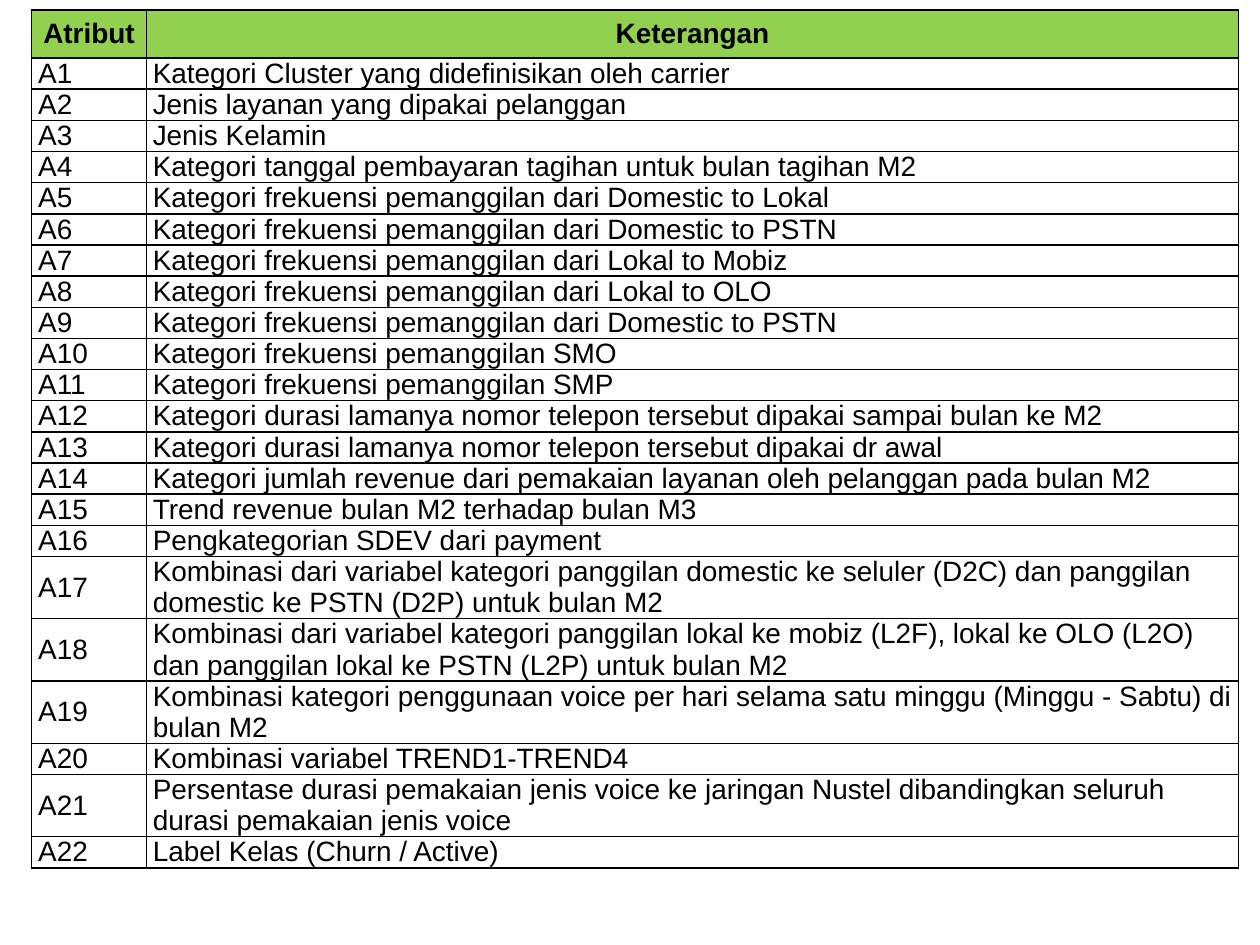
import pptx
import pptx.dml.color
import pptx.enum.text
import pptx.oxml
import pptx.oxml.ns
import pptx.util

Cm = pptx.util.Cm
Pt = pptx.util.Pt
RGBColor = pptx.dml.color.RGBColor
PP_ALIGN = pptx.enum.text.PP_ALIGN

BLACK = RGBColor(0x00, 0x00, 0x00)
GREEN = RGBColor(0x92, 0xD0, 0x50)

HEADER = ("Atribut", "Keterangan")
DESCRIPTIONS = [
    "Kategori Cluster yang didefinisikan oleh carrier",
    "Jenis layanan yang dipakai pelanggan",
    "Jenis Kelamin",
    "Kategori tanggal pembayaran tagihan untuk bulan tagihan M2",
    "Kategori frekuensi pemanggilan dari Domestic to Lokal",
    "Kategori frekuensi pemanggilan dari Domestic to PSTN",
    "Kategori frekuensi pemanggilan dari Lokal to Mobiz",
    "Kategori frekuensi pemanggilan dari Lokal to OLO",
    "Kategori frekuensi pemanggilan dari Domestic to PSTN",
    "Kategori frekuensi pemanggilan SMO",
    "Kategori frekuensi pemanggilan SMP",
    "Kategori durasi lamanya nomor telepon tersebut dipakai sampai bulan ke M2",
    "Kategori durasi lamanya nomor telepon tersebut dipakai dr awal",
    "Kategori jumlah revenue dari pemakaian layanan oleh pelanggan pada bulan M2",
    "Trend revenue bulan M2 terhadap bulan M3",
    "Pengkategorian SDEV dari payment",
    "Kombinasi dari variabel kategori panggilan domestic ke seluler (D2C) "
    "dan panggilan domestic ke PSTN (D2P) untuk bulan M2",
    "Kombinasi dari variabel kategori panggilan lokal ke mobiz (L2F), "
    "lokal ke OLO (L2O) dan panggilan lokal ke PSTN (L2P) untuk bulan M2",
    "Kombinasi kategori penggunaan voice per hari selama satu minggu "
    "(Minggu - Sabtu) di bulan M2",
    "Kombinasi variabel TREND1-TREND4",
    "Persentase durasi pemakaian jenis voice ke jaringan Nustel "
    "dibandingkan seluruh durasi pemakaian jenis voice",
    "Label Kelas (Churn / Active)",
]

COLUMN_WIDTHS = (2.31, 22.02)
HEADER_HEIGHT = 0.97
LINE_HEIGHT = 0.58
CHARS_PER_LINE = 85


def write_text(tf, text, font="Arial", size=16, color=BLACK, bold=False,
               align=PP_ALIGN.LEFT):
    p = tf.paragraphs[0]
    p.alignment = align
    r = p.add_run()
    r.text = text
    r.font.name = font
    r.font.size = Pt(size)
    r.font.bold = bold
    r.font.color.rgb = color


def add_borders(cell, color=BLACK, width=1):
    """Draw all four edges; they must precede the fill in the cell XML."""
    tc_pr = cell._tc.get_or_add_tcPr()
    for i, edge in enumerate(("lnL", "lnR", "lnT", "lnB")):
        tc_pr.insert(i, pptx.oxml.parse_xml(
            f'<a:{edge} {pptx.oxml.ns.nsdecls("a")} w="{Pt(width)}">'
            f'<a:solidFill><a:srgbClr val="{color}"/></a:solidFill></a:{edge}>'))


class SlideBuilder:
    def __init__(self, slide, margin=0.13):
        self.slide = slide
        self.margin = Cm(margin)

    def cell(self, cell, text, header):
        cell.margin_left = cell.margin_right = self.margin
        cell.margin_top = cell.margin_bottom = 0
        cell.vertical_anchor = pptx.enum.text.MSO_ANCHOR.MIDDLE
        if header:
            cell.fill.solid()
            cell.fill.fore_color.rgb = GREEN
        else:
            cell.fill.background()
        add_borders(cell)
        write_text(cell.text_frame, text, bold=header,
                   align=PP_ALIGN.CENTER if header else PP_ALIGN.LEFT)

    def table(self, rows, left, top, height):
        frame = self.slide.shapes.add_table(
            len(rows), len(COLUMN_WIDTHS), Cm(left), Cm(top),
            Cm(sum(COLUMN_WIDTHS)), Cm(height))
        table = frame.table
        table.horz_banding = False
        for column, width in zip(table.columns, COLUMN_WIDTHS):
            column.width = Cm(width)
        for i, values in enumerate(rows):
            lines = 1 + len(values[-1]) // CHARS_PER_LINE
            table.rows[i].height = Cm(LINE_HEIGHT * lines if i else HEADER_HEIGHT)
            for j, text in enumerate(values):
                self.cell(table.cell(i, j), text, header=i == 0)
        frame.height = Cm(height)


def main():
    prs = pptx.Presentation()
    prs.slide_width, prs.slide_height = Cm(25.4), Cm(19.05)
    builder = SlideBuilder(prs.slides.add_slide(prs.slide_layouts[6]))
    attributes = [(f"A{n}", text) for n, text in enumerate(DESCRIPTIONS, 1)]
    builder.table([HEADER] + attributes, left=0.64, top=0.2, height=18.57)
    prs.save("out.pptx")


if __name__ == "__main__":
    main()
